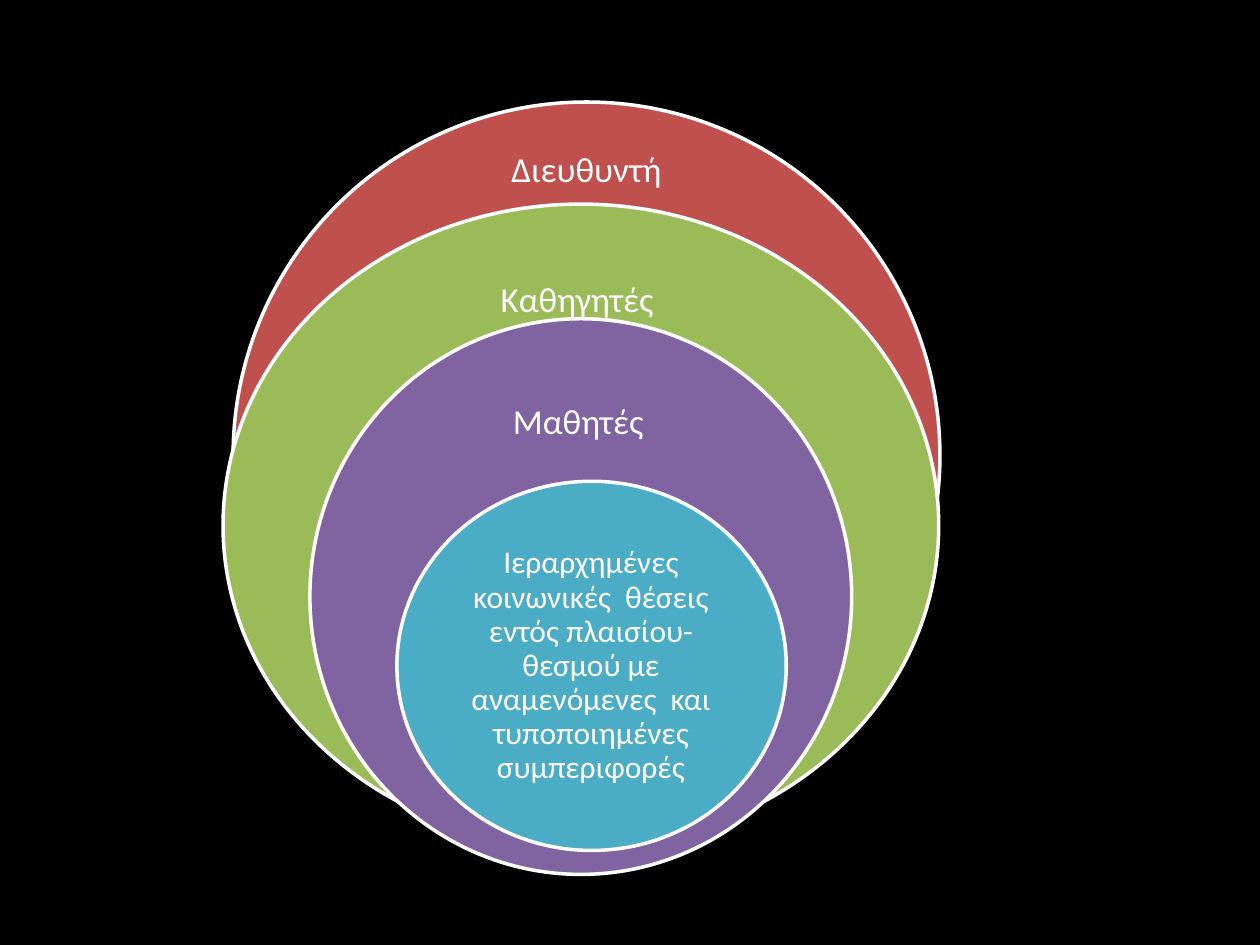
from dataclasses import dataclass

from pptx import Presentation
from pptx.dml.color import RGBColor
from pptx.enum.shapes import MSO_SHAPE
from pptx.enum.text import MSO_ANCHOR, PP_ALIGN
from pptx.util import Inches, Pt

BLACK = RGBColor(0x00, 0x00, 0x00)
WHITE = RGBColor(0xFF, 0xFF, 0xFF)
RED = RGBColor(0xC0, 0x50, 0x4D)
GREEN = RGBColor(0x9B, 0xBB, 0x59)
PURPLE = RGBColor(0x80, 0x64, 0xA2)
TEAL = RGBColor(0x4B, 0xAC, 0xC6)


@dataclass(frozen=True)
class Area:
    left: float
    top: float
    width: float
    height: float

    def lengths(self) -> list[int]:
        return [Inches(value) for value in (self.left, self.top, self.width, self.height)]


@dataclass(frozen=True)
class Ring:
    circle: Area
    color: RGBColor
    label: str
    label_area: Area
    size: int = 20
    inset: float = 0.16


RINGS = [
    Ring(Area(1.85, 0.81, 5.61, 5.61), RED, "Διευθυντή", Area(3.87, 0.94, 1.57, 0.84)),
    Ring(Area(1.77, 1.62, 5.68, 5.1), GREEN, "Καθηγητές", Area(3.59, 1.93, 1.98, 0.92)),
    Ring(Area(2.46, 2.53, 4.3, 4.41), PURPLE, "Μαθητές", Area(3.59, 2.86, 2, 0.99)),
    Ring(
        Area(3.15, 3.82, 3.09, 2.93),
        TEAL,
        "Ιεραρχημένες κοινωνικές  θέσεις εντός πλαισίου-θεσμού με "
        "αναμενόμενες  και τυποποιημένες συμπεριφορές",
        Area(3.6, 4.55, 2.18, 1.47),
        size=18,
        inset=0.14,
    ),
]


def add_text(slide, text: str, area: Area, *, size: int, inset: float,
             color: RGBColor = WHITE, font: str = "Calibri") -> None:
    box = slide.shapes.add_textbox(*area.lengths())
    frame = box.text_frame
    frame.word_wrap = True
    frame.vertical_anchor = MSO_ANCHOR.MIDDLE
    frame.margin_left = frame.margin_right = Inches(inset)
    frame.margin_top = frame.margin_bottom = Inches(inset)
    para = frame.paragraphs[0]
    para.alignment = PP_ALIGN.CENTER
    para.line_spacing = 0.9
    span = para.add_run()
    span.text = text
    span.font.name = font
    span.font.size = Pt(size)
    span.font.color.rgb = color


def add_ring(slide, ring: Ring) -> None:
    circle = slide.shapes.add_shape(MSO_SHAPE.OVAL, *ring.circle.lengths())
    circle.shadow.inherit = False
    circle.fill.solid()
    circle.fill.fore_color.rgb = ring.color
    circle.line.color.rgb = WHITE
    circle.line.width = Pt(2)
    add_text(slide, ring.label, ring.label_area, size=ring.size, inset=ring.inset)


def main() -> None:
    deck = Presentation()
    deck.slide_width = Inches(10)
    deck.slide_height = Inches(7.5)
    page = deck.slides.add_slide(deck.slide_layouts[6])
    page.background.fill.solid()
    page.background.fill.fore_color.rgb = BLACK
    for ring in RINGS:
        add_ring(page, ring)
    deck.save("out.pptx")


if __name__ == "__main__":
    main()
